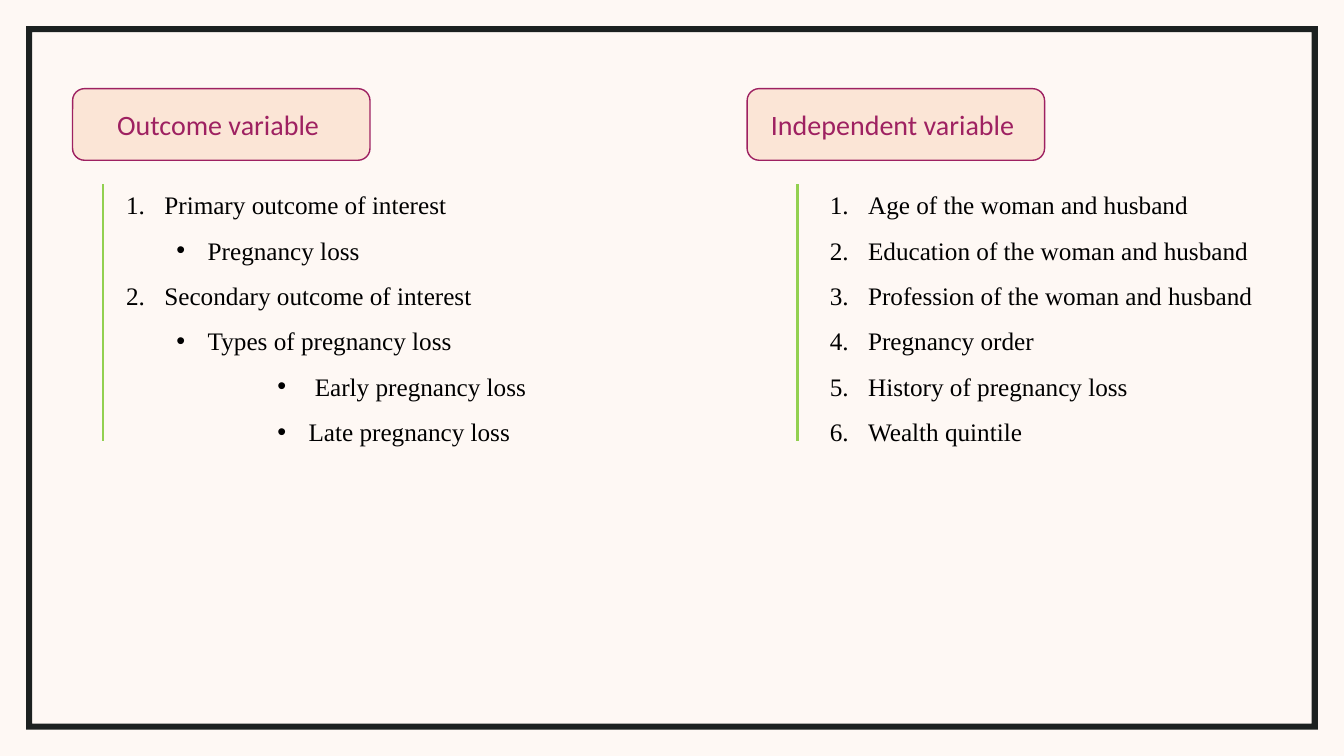
from dataclasses import dataclass
from typing import Optional

from lxml.etree import SubElement
from pptx import Presentation
from pptx.dml.color import RGBColor
from pptx.enum.shapes import MSO_CONNECTOR, MSO_SHAPE
from pptx.enum.text import MSO_ANCHOR, MSO_AUTO_SIZE, PP_ALIGN
from pptx.oxml.ns import qn
from pptx.util import Emu, Inches, Pt

COLORS = {
    "background": "FEF8F4",
    "frame": "1C2120",
    "heading_fill": "FBE5D6",
    "heading": "9E2161",
    "rule": "92D050",
    "text": "000000",
}
WIDTH, HEIGHT = Inches(13.33), Inches(7.5)
HEADING_TOP, HEADING_WIDTH, HEADING_HEIGHT = 11.73, 22.13, 9.47
RULE_TOP, RULE_BOTTOM = 24.4, 58.4
LIST_TOP = 22.4
INDENTS = {0: (0.38, -0.38), 1: (0.81, -0.31), 3: (1.81, -0.31)}


@dataclass(frozen=True)
class Item:
    text: str
    level: int = 0


@dataclass(frozen=True)
class Column:
    heading: str
    heading_left: float
    rule_left: float
    list_left: float
    list_width: float
    list_height: float
    items: tuple[Item, ...]


COLUMNS = (
    Column("Outcome variable ", 5.4, 7.65, 8.63, 40.14, 36.93, (
        Item("Primary outcome of interest"),
        Item("Pregnancy loss", 1),
        Item("Secondary outcome of interest"),
        Item("Types of pregnancy loss", 1),
        Item(" Early pregnancy loss", 3),
        Item("Late pregnancy loss", 3),
    )),
    Column("Independent variable ", 55.59, 59.34, 60.99, 33.98, 42.13, (
        Item("Age of the woman and husband"),
        Item("Education of the woman and husband"),
        Item("Profession of the woman and husband"),
        Item("Pregnancy order"),
        Item("History of pregnancy loss"),
        Item("Wealth quintile"),
    )),
)


def across(percent: float) -> Emu:
    return Emu(round(WIDTH * percent / 100))


def down(percent: float) -> Emu:
    return Emu(round(HEIGHT * percent / 100))


def rgb(name: str) -> RGBColor:
    return RGBColor.from_string(COLORS[name])


def write(p, text: str, *, size: float, font: str, color: str,
          align: PP_ALIGN = PP_ALIGN.LEFT, spacing: Optional[float] = None) -> None:
    p.alignment = align
    if spacing:
        p.line_spacing = spacing
        p.space_before = p.space_after = Pt(0)
    r = p.add_run()
    r.text = text
    r.font.size = Pt(size)
    r.font.name = font
    r.font.color.rgb = rgb(color)


def mark(p, level: int) -> None:
    p.level = level
    left, hanging = INDENTS[level]
    pPr = p._p.get_or_add_pPr()
    pPr.set("marL", str(Inches(left)))
    pPr.set("indent", str(Inches(hanging)))
    if level:
        SubElement(pPr, qn("a:buFont"), typeface="Arial")
        SubElement(pPr, qn("a:buChar"), char="•")
    else:
        SubElement(pPr, qn("a:buFont"), typeface="+mj-lt")
        SubElement(pPr, qn("a:buAutoNum"), type="arabicPeriod")


def fill_list(sp, column: Column) -> None:
    sp.left, sp.top = across(column.list_left), down(LIST_TOP)
    sp.width, sp.height = across(column.list_width), down(column.list_height)
    tf = sp.text_frame
    tf.word_wrap = True
    tf.auto_size = MSO_AUTO_SIZE.SHAPE_TO_FIT_TEXT
    tf.vertical_anchor = MSO_ANCHOR.TOP
    for i, item in enumerate(column.items):
        p = tf.add_paragraph() if i else tf.paragraphs[0]
        write(p, item.text, size=18, font="Times New Roman", color="text", spacing=1.5)
        mark(p, item.level)


def add_heading(s, column: Column) -> None:
    sp = s.shapes.add_shape(
        MSO_SHAPE.ROUNDED_RECTANGLE, across(column.heading_left), down(HEADING_TOP),
        across(HEADING_WIDTH), down(HEADING_HEIGHT))
    sp.shadow.inherit = False
    sp.fill.solid()
    sp.fill.fore_color.rgb = rgb("heading_fill")
    sp.line.color.rgb = rgb("heading")
    sp.line.width = Pt(1)
    tf = sp.text_frame
    tf.word_wrap = True
    tf.vertical_anchor = MSO_ANCHOR.MIDDLE
    write(tf.paragraphs[0], column.heading, size=20, font="Calibri",
          color="heading", align=PP_ALIGN.CENTER)


def add_rule(s, column: Column) -> None:
    x = across(column.rule_left)
    rule = s.shapes.add_connector(
        MSO_CONNECTOR.STRAIGHT, x, down(RULE_TOP), x, down(RULE_BOTTOM))
    rule.line.color.rgb = rgb("rule")
    rule.line.width = Pt(1.5)
    SubElement(rule._element.spPr, qn("a:effectLst"))


def add_frame(s) -> None:
    def corners(x: float, y: float) -> list[tuple[Emu, Emu]]:
        left, right = across(x), across(100 - x)
        top, bottom = down(y), down(100 - y)
        return [(left, top), (left, bottom), (right, bottom), (right, top)]

    outer = corners(1.95, 3.47)
    inner = corners(2.4, 4.27)[::-1]
    builder = s.shapes.build_freeform(*outer[0])
    builder.add_line_segments(outer[1:], close=True)
    builder.move_to(*inner[0])
    builder.add_line_segments(inner[1:], close=True)
    sp = builder.convert_to_shape()
    sp.shadow.inherit = False
    sp.fill.solid()
    sp.fill.fore_color.rgb = rgb("frame")
    sp.line.fill.background()


def main() -> None:
    prs = Presentation()
    prs.slide_width, prs.slide_height = WIDTH, HEIGHT
    s = prs.slides.add_slide(prs.slide_layouts.get_by_name("Two Content"))
    s.background.fill.solid()
    s.background.fill.fore_color.rgb = rgb("background")
    title, *bodies = s.placeholders
    title._element.getparent().remove(title._element)
    for body, column in zip(bodies, COLUMNS):
        fill_list(body, column)
        add_heading(s, column)
        add_rule(s, column)
    add_frame(s)
    prs.save("out.pptx")


if __name__ == "__main__":
    main()
